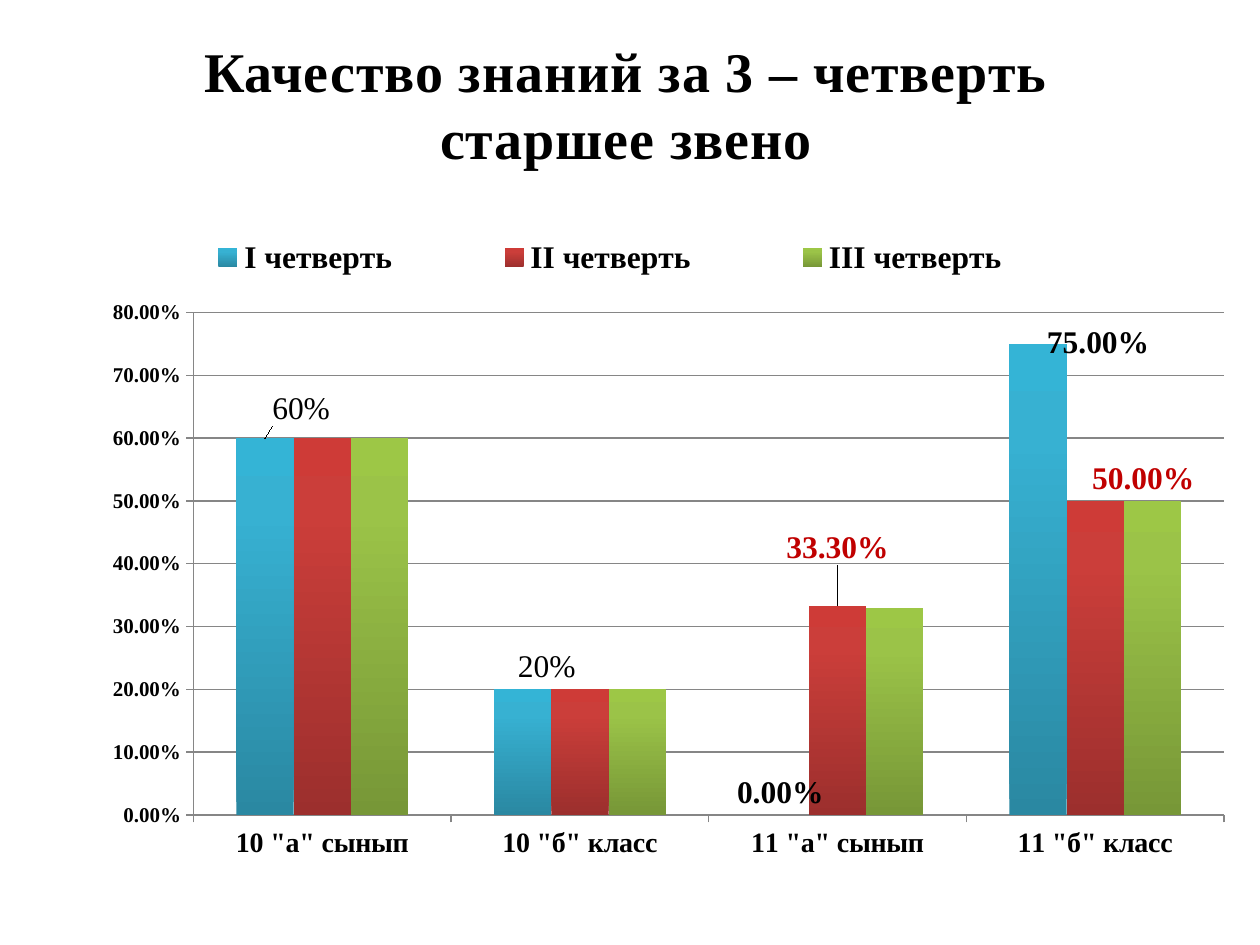
from copy import deepcopy
from dataclasses import dataclass

from lxml import etree
from pptx import Presentation
from pptx.chart.data import CategoryChartData
from pptx.dml.color import RGBColor
from pptx.enum.chart import XL_CHART_TYPE, XL_LABEL_POSITION, XL_LEGEND_POSITION, XL_TICK_MARK
from pptx.enum.text import MSO_ANCHOR, PP_ALIGN
from pptx.oxml.ns import qn
from pptx.util import Inches, Pt

COLUMNS = XL_CHART_TYPE.COLUMN_CLUSTERED
LEGEND_RIGHT = XL_LEGEND_POSITION.RIGHT
OUTSIDE_END = XL_LABEL_POSITION.OUTSIDE_END
TICK_OUT = XL_TICK_MARK.OUTSIDE
CENTER = PP_ALIGN.CENTER
MIDDLE = MSO_ANCHOR.MIDDLE


@dataclass(frozen=True)
class Theme:
    face: str = "Times New Roman"
    text: str = "000000"
    accent: str = "C00000"
    axis: str = "868686"
    title: int = 32
    label: int = 18
    category: int = 16
    scale: int = 12
    # Column gradients from foot to top
    columns: tuple = (("2A88A2", "37B1D2", "34B4D6"),
                      ("9C2F2D", "CB3E3A", "CE3B37"),
                      ("779737", "9BC348", "9DC746"))
    stops: tuple = (0, 0.8, 1)


CLASSES = ['10 "а" сынып', '10 "б" класс', '11 "а" сынып', '11 "б" класс']
QUARTERS = {
    "I четверть": (0.6, 0.2, 0, 0.75),
    "II четверть": (0.6, 0.2, 0.333, 0.5),
    "III четверть": (0.6, 0.2, 0.33, 0.5),
}
# Quarter, class, own wording (None shows the value), shift right and down
LABELS = [
    (0, 0, "60%", 0.03, -0.01), (0, 1, "20%", 0.02, 0),
    (0, 2, None, 0, 0), (0, 3, None, 0.05, 0.03),
    (1, 2, None, 0, -0.05), (1, 3, None, 0.04, 0),
]


def manual_layout(inner=False, **places):
    layout = etree.Element(qn("c:layout"))
    manual = etree.SubElement(layout, qn("c:manualLayout"))
    settings = {"layoutTarget": "inner", "xMode": "edge", "yMode": "edge"} if inner else {}
    if "w" in places and not inner:
        settings = {"xMode": "edge", "yMode": "edge"}
    for name, value in {**settings, **places}.items():
        etree.SubElement(manual, qn(f"c:{name}")).set("val", str(value))
    return layout


def place_after(anchor, layout):
    """Put the layout after anchor, in place of any layout already there."""
    following = anchor.getnext()
    if following is not None and following.tag == layout.tag:
        anchor.getparent().remove(following)
    anchor.addnext(layout)


class SlideBuilder:
    def __init__(self, slide, theme):
        self.slide = slide
        self.theme = theme

    def style(self, font, size, bold=True, color=None):
        font.name = self.theme.face
        font.size = Pt(size)
        font.bold = bold
        font.color.rgb = RGBColor.from_string(color or self.theme.text)

    def title(self, text, *box):
        frame = self.slide.shapes.add_textbox(*map(Inches, box)).text_frame
        frame.word_wrap = True
        frame.vertical_anchor = MIDDLE
        heading = frame.paragraphs[0]
        heading.text = text
        heading.alignment = CENTER
        self.style(heading.font, self.theme.title)
        for run in heading.runs:
            run.font._element.set("spc", "50")

    def column_chart(self, classes, quarters, labels, *box):
        data = CategoryChartData(number_format="0.00%")
        data.categories = classes
        for name, values in quarters.items():
            data.add_series(name, values)
        chart = self.slide.shapes.add_chart(COLUMNS, *map(Inches, box), data).chart
        chart.has_title = False
        self.style(chart.font, self.theme.label, bold=False)
        plot = chart.plots[0]
        plot.gap_width = 150
        plot.overlap = 0
        plot.vary_by_categories = False
        for series, colors in zip(plot.series, self.theme.columns):
            self.gradient(series, colors)
        for quarter, index, text, right, down in labels:
            self.point_label(plot.series[quarter], index, text, right, down,
                             self.theme.accent if quarter else self.theme.text)
        for quarter in {label[0] for label in labels}:
            plot.series[quarter].data_labels.show_value = False
        self.axes(chart)
        self.legend(chart)
        plot_area = chart._chartSpace.chart.plotArea
        for old in plot_area.findall(qn("c:layout")):
            plot_area.remove(old)
        plot_area.insert(0, manual_layout(inner=True, x=0.144, y=0.177, w=0.856, h=0.706))

    def gradient(self, series, colors):
        fill = series.format.fill
        fill.gradient()
        fill.gradient_angle = 90
        stop_list = series._element.find(".//" + qn("a:gsLst"))
        stop_list.append(deepcopy(stop_list[-1]))
        for stop, position, color in zip(fill.gradient_stops, self.theme.stops, colors):
            stop.position = position
            stop.color.rgb = RGBColor.from_string(color)

    def point_label(self, series, index, text, right, down, color):
        label = series.points[index].data_label
        if text:
            paragraph = label.text_frame.paragraphs[0]
            paragraph.text = text
            self.style(paragraph.runs[0].font, self.theme.label, bold=False, color=color)
        else:
            self.style(label.font, self.theme.label, color=color)
        label.position = OUTSIDE_END
        if right or down:
            idx = label._get_or_add_dLbl().find(qn("c:idx"))
            place_after(idx, manual_layout(x=right, y=down))

    def axes(self, chart):
        values = chart.value_axis
        values.minimum_scale, values.maximum_scale, values.major_unit = 0, 0.8, 0.1
        values.tick_labels.number_format = "0.00%"
        values.tick_labels.number_format_is_linked = False
        values.has_major_gridlines = True
        gray = RGBColor.from_string(self.theme.axis)
        values.major_gridlines.format.line.color.rgb = gray
        for axis, size in ((values, self.theme.scale), (chart.category_axis, self.theme.category)):
            axis.major_tick_mark = TICK_OUT
            axis.format.line.color.rgb = gray
            self.style(axis.tick_labels.font, size)

    def legend(self, chart):
        chart.has_legend = True
        legend = chart.legend
        legend.position = LEGEND_RIGHT
        legend.include_in_layout = False
        self.style(legend.font, self.theme.label)
        place_after(legend._element.find(qn("c:legendPos")),
                    manual_layout(x=0.08, y=0.06, w=0.82, h=0.08))


def main():
    deck = Presentation()
    deck.slide_width, deck.slide_height = Inches(10), Inches(7.5)
    builder = SlideBuilder(deck.slides.add_slide(deck.slide_layouts[6]), Theme())
    builder.title("Качество знаний за 3 – четверть\vстаршее звено", 0.23, 0.23, 9.48, 1.18)
    builder.column_chart(CLASSES, QUARTERS, LABELS, 0.16, 1.48, 9.56, 5.65)
    deck.save("out.pptx")


if __name__ == "__main__":
    main()
